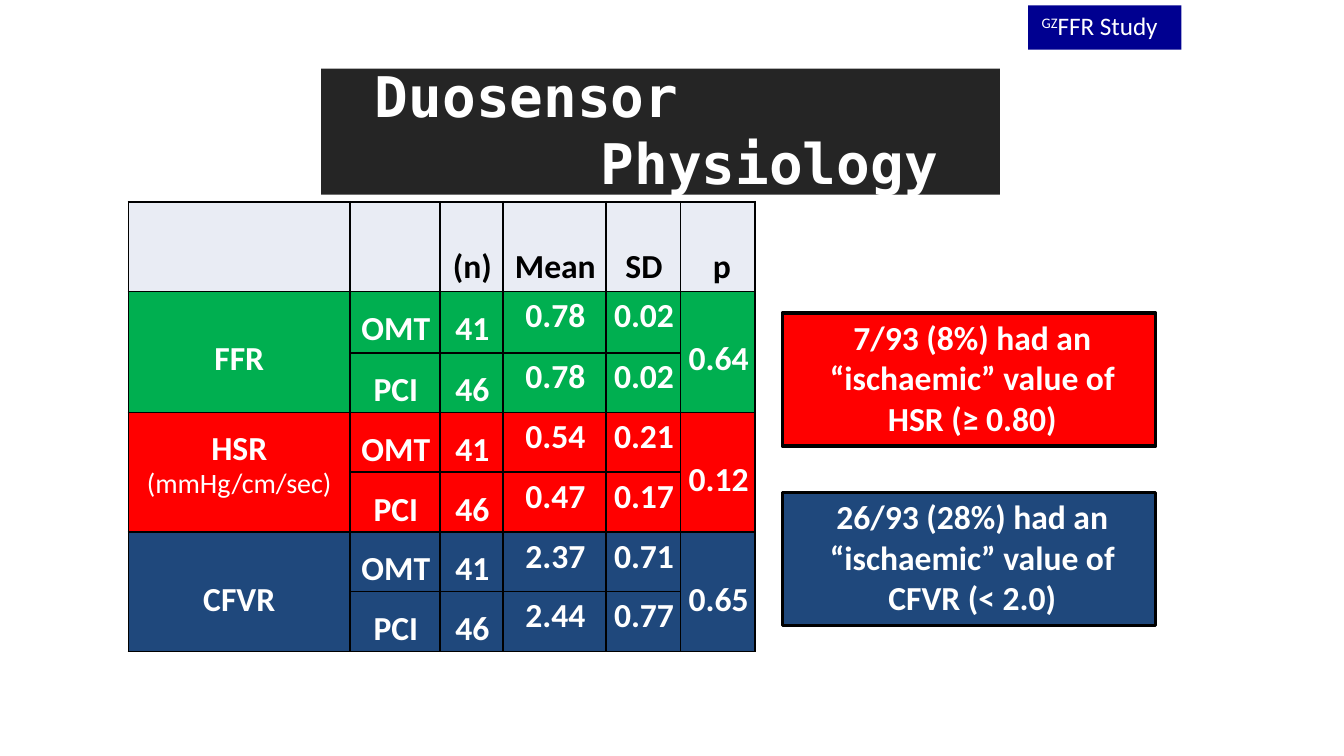
import lxml.etree
import pptx
import pptx.dml.color
import pptx.enum.shapes
import pptx.enum.text
import pptx.oxml.ns
import pptx.util

Pt, Inches = pptx.util.Pt, pptx.util.Inches
ALIGN = pptx.enum.text.PP_ALIGN
WIDTH, HEIGHT = Pt(720), Pt(405)
COLORS = {
    "white": "FFFFFF", "black": "000000", "banner": "252525", "tag": "000090",
    "header": "E9ECF4", "green": "00AF50", "red": "FF0000", "blue": "1F487C",
}
COLUMNS = [16.5, 6.7, 4.7, 7.65, 5.55, 5.55]
ROWS = [48, 33, 32, 32, 32, 32, 32]
HEADINGS = ["", "", "(n)", "Mean", "SD", "p"]
MEASURES = [
    ("FFR", "", "green", "0.64", [("0.78", "0.02"), ("0.78", "0.02")]),
    ("HSR", "(mmHg/cm/sec)", "red", "0.12", [("0.54", "0.21"), ("0.47", "0.17")]),
    ("CFVR", "", "blue", "0.65", [("2.37", "0.71"), ("2.44", "0.77")]),
]
ARMS = [("OMT", "41"), ("PCI", "46")]
CALLOUTS = [
    (41.4, "red", ["7/93 ", "(8%) had an ", "“ischaemic” value ", "of HSR (≥ 0.80)"]),
    (65.12, "blue", ["26/93 ", "(28%) had an ", "“ischaemic” value ", "of ", "CFVR ", "(< 2.0)"]),
]


def rgb(name):
    return pptx.dml.color.RGBColor.from_string(COLORS[name])


def area(left, top, width, height):
    return [int(size * share / 100) for size, share in
            ((WIDTH, left), (HEIGHT, top), (WIDTH, width), (HEIGHT, height))]


def add_run(p, text, size=18, color="white", bold=True, font="Calibri"):
    r = p.add_run()
    r.text = text
    r.font.size = Pt(size)
    r.font.name = font
    r.font.bold = bold
    r.font.color.rgb = rgb(color)
    return r


def set_margins(holder, left=0, top=0, right=0):
    holder.margin_left = Inches(left)
    holder.margin_top = Inches(top)
    holder.margin_right = Inches(right)
    holder.margin_bottom = 0
    holder.vertical_anchor = pptx.enum.text.MSO_ANCHOR.TOP


def add_rectangle(s, place, fill, line=None):
    sp = s.shapes.add_shape(pptx.enum.shapes.MSO_SHAPE.RECTANGLE, *place)
    sp.shadow.inherit = False
    sp.fill.solid()
    sp.fill.fore_color.rgb = rgb(fill)
    if line:
        sp.line.color.rgb = rgb(line)
        sp.line.width = Pt(1.8)
    else:
        sp.line.fill.background()
    return sp


def add_title(s):
    add_rectangle(s, area(23.9, 9.07, 50.5, 16.7), "banner")
    title = s.shapes.title
    title.element.getparent().append(title.element)
    title.left, title.top, title.width, title.height = area(27.7, 7.9, 42.7, 18.3)
    tf = title.text_frame
    tf.word_wrap = True
    tf.auto_size = pptx.enum.text.MSO_AUTO_SIZE.NONE
    set_margins(tf, top=0.01)
    p = tf.paragraphs[0]
    p.alignment = ALIGN.LEFT
    pPr = p._p.get_or_add_pPr()
    pPr.set("marL", str(Inches(1.7)))
    pPr.set("indent", str(Inches(-1.68)))
    add_run(p, "Duosensor Physiology", 30, font="DejaVu Sans Mono")


def add_callout(s, top, fill, texts):
    sp = add_rectangle(s, area(58.2, top, 27.8, 17.6), fill, "black")
    tf = sp.text_frame
    tf.word_wrap = True
    set_margins(tf, 0.33, 0.03, 0.28)
    p = tf.paragraphs[0]
    p.alignment = ALIGN.CENTER
    for text in texts:
        add_run(p, text)


def add_study_tag(s):
    add_rectangle(s, area(76.5, 0.71, 11.4, 5.87), "tag")
    tf = s.shapes.add_textbox(*area(77.4, 1.15, 9.1, 4.45)).text_frame
    tf.word_wrap = True
    set_margins(tf, 0.01, 0.01)
    p = tf.paragraphs[0]
    r = add_run(p, "GZ", 13.5, bold=False)
    r._r.get_or_add_rPr().set("baseline", "25000")
    add_run(p, "FFR Study", 13.5, bold=False)


def add_borders(cell):
    tcPr = cell._tc.get_or_add_tcPr()
    for position, side in enumerate(("lnL", "lnR", "lnT", "lnB")):
        ln = lxml.etree.Element(pptx.oxml.ns.qn("a:" + side), w=str(Pt(1)))
        fill = lxml.etree.SubElement(ln, pptx.oxml.ns.qn("a:solidFill"))
        lxml.etree.SubElement(fill, pptx.oxml.ns.qn("a:srgbClr"), val=COLORS["black"])
        tcPr.insert(position, ln)


def fill_cell(cell, text, top, color="white", left=0, align=ALIGN.CENTER, spacing=20.9):
    if not text:
        return
    set_margins(cell, left, top)
    p = cell.text_frame.paragraphs[0]
    p.alignment = align
    if spacing:
        p.line_spacing = Pt(spacing)
    add_run(p, text, color=color)


def add_measure(table, top, name, unit, color, p_value, results):
    for col in (0, 5):
        table.cell(top, col).merge(table.cell(top + 1, col))
    label = table.cell(top, 0)
    fill_cell(label, name, 0.14 if unit else 0.35, spacing=20.4 if unit else None)
    if unit:
        p = label.text_frame.add_paragraph()
        p.alignment = ALIGN.CENTER
        p.line_spacing = Pt(16.8)
        add_run(p, unit, 15, bold=False)
    fill_cell(table.cell(top, 5), p_value, 0.35, left=0.06, align=ALIGN.LEFT, spacing=None)
    for row, (arm, result) in enumerate(zip(ARMS, results), top):
        for col, text in enumerate(arm, 1):
            fill_cell(table.cell(row, col), text, 0.14, left=0.01)
        for col, text in enumerate(result, 3):
            fill_cell(table.cell(row, col), text, 0.03, left=0.01, spacing=None)


def add_results_table(s):
    place = area(9.55, 26.69, sum(COLUMNS), 59.5)
    table = s.shapes.add_table(len(ROWS), len(COLUMNS), *place).table
    table.first_row = table.horz_banding = False
    for column, share in zip(table.columns, COLUMNS):
        column.width = int(WIDTH * share / 100)
    for row, height in zip(table.rows, ROWS):
        row.height = Pt(height)
    fills = ["header"] + [measure[2] for measure in MEASURES for arm in ARMS]
    for row, fill in zip(table.rows, fills):
        for cell in row.cells:
            cell.fill.solid()
            cell.fill.fore_color.rgb = rgb(fill)
            add_borders(cell)
    for col, text in enumerate(HEADINGS):
        last = text == "p"
        fill_cell(table.cell(0, col), text, 0.35, "black", 0.24 if last else 0.01,
                  ALIGN.LEFT if last else ALIGN.CENTER)
    for index, measure in enumerate(MEASURES):
        add_measure(table, 1 + index * len(ARMS), *measure)


def main():
    prs = pptx.Presentation()
    prs.slide_width, prs.slide_height = WIDTH, HEIGHT
    s = prs.slides.add_slide(prs.slide_layouts[5])
    add_title(s)
    add_results_table(s)
    add_study_tag(s)
    for callout in CALLOUTS:
        add_callout(s, *callout)
    prs.save("out.pptx")


if __name__ == "__main__":
    main()
